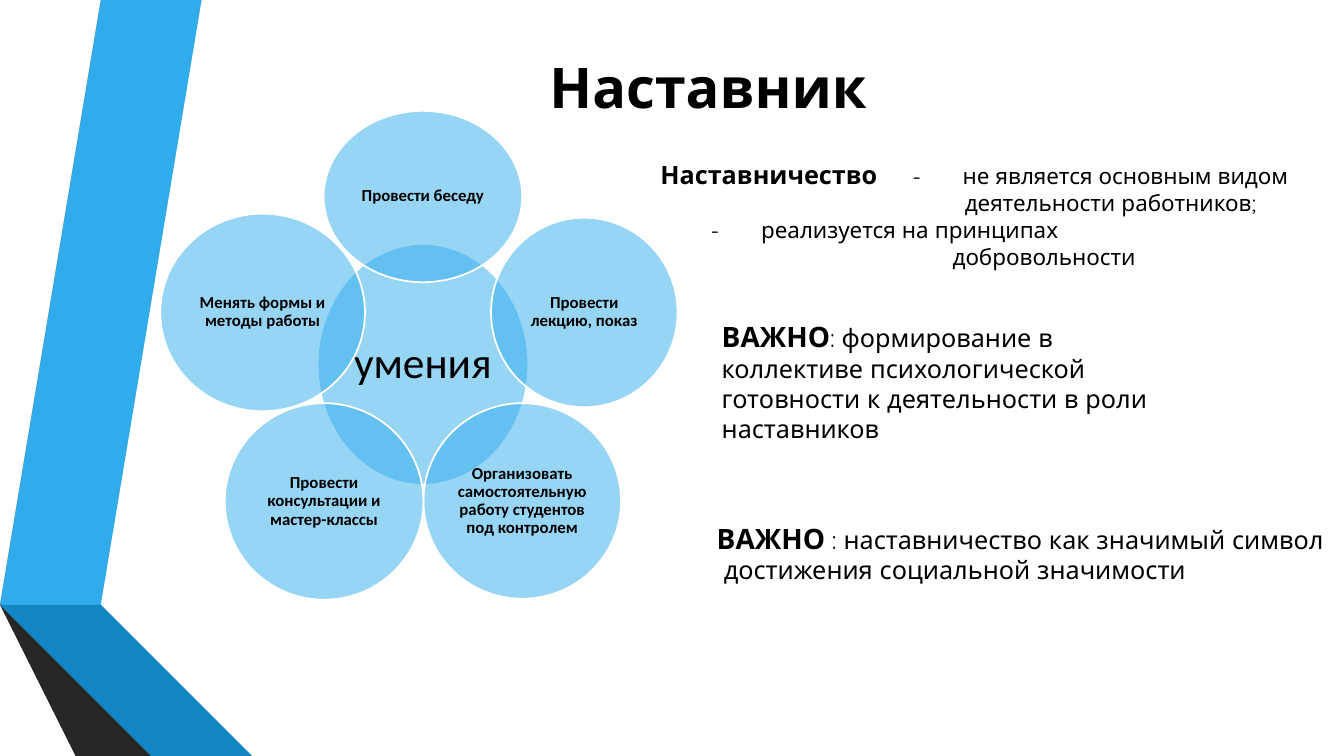
from lxml import etree
from pptx import Presentation
from pptx.dml.color import RGBColor
from pptx.enum.shapes import MSO_SHAPE
from pptx.enum.text import MSO_ANCHOR, MSO_AUTO_SIZE, PP_ALIGN
from pptx.oxml.ns import qn
from pptx.util import Inches, Pt

OVAL = MSO_SHAPE.OVAL
MIDDLE = MSO_ANCHOR.MIDDLE
GROW = MSO_AUTO_SIZE.SHAPE_TO_FIT_TEXT
CENTER, LEFT = PP_ALIGN.CENTER, PP_ALIGN.LEFT
TITLE_ONLY = 5

BLACK = RGBColor(0x00, 0x00, 0x00)
WHITE = RGBColor(0xFF, 0xFF, 0xFF)
SKY = RGBColor(0x30, 0xAC, 0xEC)
BLUE = RGBColor(0x12, 0x87, 0xC3)
NAVY = RGBColor(0x0C, 0x5A, 0x82)
GRAY = RGBColor(0x59, 0x59, 0x59)
CHARCOAL = RGBColor(0x40, 0x40, 0x40)
SOOT = RGBColor(0x26, 0x26, 0x26)

RIBBONS = [
    (SKY, [(0.5, 5.78), (0.77, 5.83), (1.73, 0), (1.45, 0)]),
    (GRAY, [(1.39, 0), (1.11, 0), (0.16, 5.73), (0.44, 5.77)]),
    (SOOT, [(0.16, 5.73), (1.45, 7.5), (1.51, 7.5)]),
    (NAVY, [(0.5, 5.79), (2.08, 7.5), (2.14, 7.5)]),
    (BLUE, [(0.5, 5.78), (2.14, 7.5), (2.83, 7.5), (0.77, 5.83)]),
    (CHARCOAL, [(2.02, 7.5), (0.48, 5.83), (0.44, 5.77), (0.16, 5.73), (1.51, 7.5)]),
]

SKILLS = [
    ("Провести беседу", (3.21, 1.1, 1.97, 1.7)),
    ("Провести лекцию, показ", (4.87, 2.16, 1.85, 1.88)),
    ("Организовать самостоятельную работу студентов под контролем",
     (4.2, 4, 1.96, 1.94)),
    ("Провести консультации и мастер-классы", (2.23, 4, 1.97, 1.95)),
    ("Менять формы и методы работы", (1.59, 2.12, 2.03, 1.96)),
]


def write(paragraph, text, size, font="Quicksand", bold=False, color=BLACK):
    run = paragraph.add_run()
    run.text = text
    run.font.name = font
    run.font.size = Pt(size)
    run.font.bold = bold
    run.font.color.rgb = color


class MentorSlide:
    def __init__(self, deck):
        self.slide = deck.slides.add_slide(deck.slide_layouts[TITLE_ONLY])
        self.shapes = self.slide.shapes

    def title(self, text, box):
        heading = self.shapes.title
        heading.left, heading.top, heading.width, heading.height = map(Inches, box)
        heading.text_frame.vertical_anchor = MIDDLE
        paragraph = heading.text_frame.paragraphs[0]
        paragraph.alignment = CENTER
        write(paragraph, text, 40, bold=True)

    def ribbon(self, color, points):
        start, *rest = points
        builder = self.shapes.build_freeform(*start, scale=Inches(1))
        builder.add_line_segments(rest, close=True)
        band = builder.convert_to_shape()
        band.shadow.inherit = False
        band.fill.solid()
        band.fill.fore_color.rgb = color
        band.line.fill.background()

    def petal(self, text, box, size=12, bold=True, inset=0.02):
        circle = self.shapes.add_shape(OVAL, *map(Inches, box))
        circle.shadow.inherit = False
        circle.fill.solid()
        circle.fill.fore_color.rgb = SKY
        tint = circle.fill._xPr.find(qn("a:solidFill"))[0]
        etree.SubElement(tint, qn("a:alpha"), val="50000")
        circle.line.color.rgb = WHITE
        circle.line.width = Pt(1.25)
        frame = circle.text_frame
        frame.word_wrap = True
        frame.vertical_anchor = MIDDLE
        frame.margin_left = frame.margin_right = Inches(inset)
        frame.margin_top = frame.margin_bottom = Inches(inset)
        paragraph = frame.paragraphs[0]
        paragraph.alignment = CENTER
        paragraph.line_spacing = 0.9
        write(paragraph, text, size, font="Calibri", bold=bold)

    def note(self, box, lines, wrap=True):
        frame = self.shapes.add_textbox(*map(Inches, box)).text_frame
        frame.word_wrap = wrap
        frame.auto_size = GROW
        for index, (runs, indent, stops) in enumerate(lines):
            paragraph = frame.add_paragraph() if index else frame.paragraphs[0]
            paragraph.alignment = LEFT
            layout = paragraph._p.get_or_add_pPr()
            layout.set("marL", str(Inches(indent)))
            layout.set("indent", "0")
            if stops:
                tabs = etree.SubElement(layout, qn("a:tabLst"))
                for stop in stops:
                    etree.SubElement(tabs, qn("a:tab"), pos=str(Inches(stop)), algn="l")
            for text, size, bold in runs:
                write(paragraph, text, size, bold=bold)


def main():
    deck = Presentation()
    deck.slide_width, deck.slide_height = Inches(13.33), Inches(7.5)
    mentor = MentorSlide(deck)

    for color, points in RIBBONS:
        mentor.ribbon(color, points)
    mentor.title("Наставник ", (1.62, 0.18, 10.96, 1.35))

    mentor.petal("умения", (3.15, 2.42, 2.09, 2.39), size=31, bold=False, inset=0.04)
    for skill, box in SKILLS:
        mentor.petal(skill, box)

    mentor.note((6.45, 1.53, 6.72, 1.25), [
        ([("Наставничество", 18, True),
          ("\t-\tне является основным видом", 16, False)], 0, (2.47, 2.85)),
        ([("деятельности работников;", 16, False)], 3.02, ()),
        ([("\t-\tреализуется на принципах", 16, False)], 0, (2.55, 2.93)),
        ([("добровольности", 16, False)], 2.9, ()),
    ])
    mentor.note((7.06, 3.12, 4.8, 1.35), [
        ([("ВАЖНО", 20, True),
          (": формирование в коллективе психологической готовности "
           "к деятельности в роли наставников", 18, False)], 0, ()),
    ])
    mentor.note((7.01, 5.12, 6.32, 0.74), [
        ([("ВАЖНО", 20, True),
          (" : наставничество как значимый символ", 18, False)], 0, ()),
        ([("достижения социальной значимости", 18, False)], 0.07, ()),
    ], wrap=False)

    deck.save("out.pptx")


if __name__ == "__main__":
    main()
